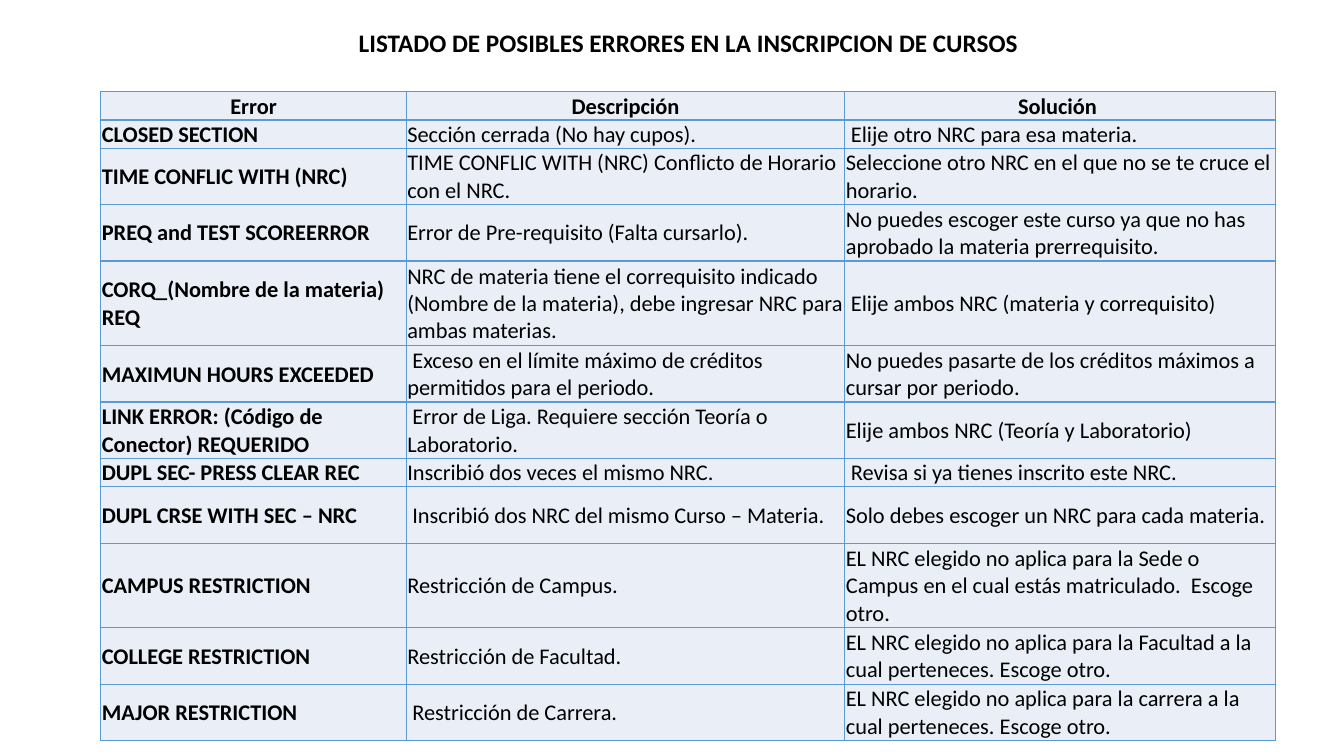
import dataclasses

import lxml.etree
import pptx
import pptx.dml.color
import pptx.enum.text
import pptx.oxml.ns
import pptx.util

Inches = pptx.util.Inches
Pt = pptx.util.Pt

COLORS = {"text": "000000", "fill": "EAEFF7", "border": "5B9BD5"}
FONT = "Calibri"
TITLE = "LISTADO DE POSIBLES ERRORES EN LA INSCRIPCION DE CURSOS"
COLUMN_WIDTHS = (3.03, 4.35, 4.27)
LINE_HEIGHT = 0.28


@dataclasses.dataclass(frozen=True)
class ErrorRow:
    lines: int
    error: str
    description: str
    solution: str
    header: bool = False


ROWS = (
    ErrorRow(1, "Error", "Descripción", "Solución ", header=True),
    ErrorRow(1, "CLOSED SECTION", "Sección cerrada (No hay cupos).",
             " Elije otro NRC para esa materia."),
    ErrorRow(2, "TIME CONFLIC WITH (NRC)",
             "TIME CONFLIC WITH (NRC) Conflicto de Horario con el NRC.",
             "Seleccione otro NRC en el que no se te cruce el horario."),
    ErrorRow(2, "PREQ and TEST SCOREERROR",
             "Error de Pre-requisito (Falta cursarlo).",
             "No puedes escoger este curso ya que no has aprobado la materia prerrequisito."),
    ErrorRow(3, "CORQ_(Nombre de la materia) REQ",
             "NRC de materia tiene el correquisito indicado (Nombre de la materia), "
             "debe ingresar NRC para ambas materias.",
             " Elije ambos NRC (materia y correquisito)"),
    ErrorRow(2, "MAXIMUN HOURS EXCEEDED",
             " Exceso en el límite máximo de créditos permitidos para el periodo.",
             "No puedes pasarte de los créditos máximos a cursar por periodo."),
    ErrorRow(2, "LINK ERROR: (Código de Conector) REQUERIDO",
             " Error de Liga. Requiere sección Teoría o Laboratorio.",
             "Elije ambos NRC (Teoría y Laboratorio)"),
    ErrorRow(1, "DUPL SEC- PRESS CLEAR REC", "Inscribió dos veces el mismo NRC.",
             " Revisa si ya tienes inscrito este NRC."),
    ErrorRow(2, "DUPL CRSE WITH SEC – NRC",
             " Inscribió dos NRC del mismo Curso – Materia.",
             "Solo debes escoger un NRC para cada materia."),
    ErrorRow(3, "CAMPUS RESTRICTION", "Restricción de Campus.",
             "EL NRC elegido no aplica para la Sede o Campus en el cual estás "
             "matriculado.  Escoge otro."),
    ErrorRow(2, "COLLEGE RESTRICTION", "Restricción de Facultad.",
             "EL NRC elegido no aplica para la Facultad a la cual perteneces. Escoge otro."),
    ErrorRow(2, "MAJOR RESTRICTION", " Restricción de Carrera.",
             "EL NRC elegido no aplica para la carrera a la cual perteneces. Escoge otro."),
)


def rgb(name: str) -> pptx.dml.color.RGBColor:
    return pptx.dml.color.RGBColor.from_string(COLORS[name])


def add_run(p, text: str, size: int, bold: bool) -> None:
    r = p.add_run()
    r.text = text
    r.font.name = FONT
    r.font.size = Pt(size)
    r.font.bold = bold
    r.font.color.rgb = rgb("text")


def add_borders(cell) -> None:
    qn = pptx.oxml.ns.qn
    tcPr = cell._tc.get_or_add_tcPr()
    for side in ("lnL", "lnR", "lnT", "lnB"):
        ln = lxml.etree.SubElement(tcPr, qn(f"a:{side}"), w=str(Pt(1)))
        fill = lxml.etree.SubElement(ln, qn("a:solidFill"))
        lxml.etree.SubElement(fill, qn("a:srgbClr"), val=COLORS["border"])


def fill_cell(cell, text: str, bold: bool, centered: bool) -> None:
    add_borders(cell)
    cell.fill.solid()
    cell.fill.fore_color.rgb = rgb("fill")
    cell.margin_left = cell.margin_right = cell.margin_top = Inches(0.01)
    cell.margin_bottom = 0
    cell.vertical_anchor = pptx.enum.text.MSO_ANCHOR.MIDDLE
    p = cell.text_frame.paragraphs[0]
    align = pptx.enum.text.PP_ALIGN
    p.alignment = align.CENTER if centered else align.LEFT
    add_run(p, text, 16, bold)


def add_title(slide) -> None:
    sp = slide.shapes.add_textbox(Inches(3.46), Inches(0.22), Inches(6.86), Inches(0.4))
    tf = sp.text_frame
    tf.word_wrap = False
    tf.auto_size = pptx.enum.text.MSO_AUTO_SIZE.SHAPE_TO_FIT_TEXT
    add_run(tf.paragraphs[0], TITLE, 18, True)


def add_error_table(slide) -> None:
    height = LINE_HEIGHT * sum(row.lines for row in ROWS)
    table = slide.shapes.add_table(
        len(ROWS), len(COLUMN_WIDTHS), Inches(1), Inches(0.91),
        Inches(sum(COLUMN_WIDTHS)), Inches(height)).table
    table.first_row = False
    table.horz_banding = False
    for column, width in zip(table.columns, COLUMN_WIDTHS):
        column.width = Inches(width)
    for i, row in enumerate(ROWS):
        table.rows[i].height = Inches(LINE_HEIGHT * row.lines)
        for j, text in enumerate((row.error, row.description, row.solution)):
            fill_cell(table.cell(i, j), text, row.header or j == 0, row.header)


def main() -> None:
    prs = pptx.Presentation()
    prs.slide_width = Inches(13.33)
    prs.slide_height = Inches(7.5)
    slide = prs.slides.add_slide(prs.slide_layouts[6])
    add_title(slide)
    add_error_table(slide)
    prs.save("out.pptx")


if __name__ == "__main__":
    main()
